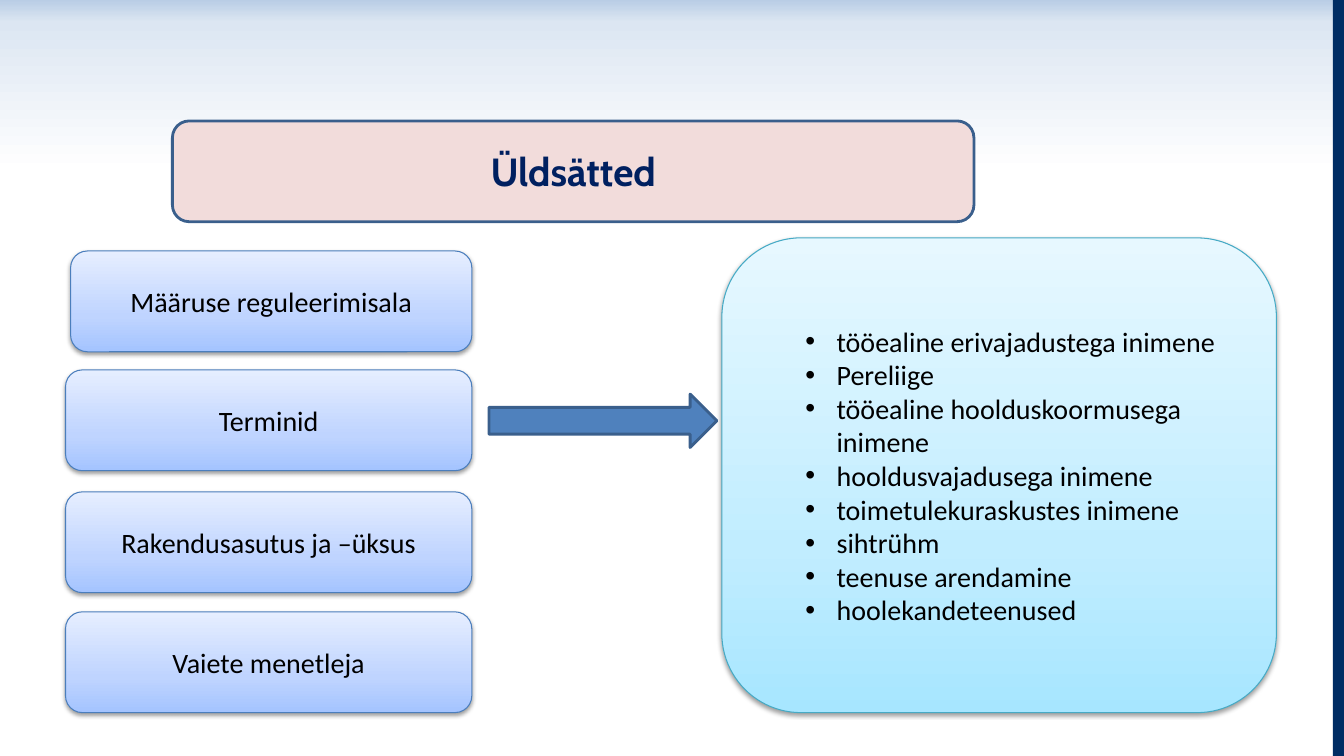
from lxml import etree
from pptx import Presentation
from pptx.dml.color import RGBColor
from pptx.enum.shapes import MSO_SHAPE as SHAPE
from pptx.enum.text import MSO_ANCHOR as ANCHOR, PP_ALIGN as ALIGN
from pptx.oxml.ns import qn
from pptx.util import Inches, Pt


def rgb(value):
    return RGBColor.from_string(value)


class SlideBuilder:
    body = {"name": "Calibri", "size": Pt(20), "bold": False}
    heading = {"name": "Cabin", "size": Pt(28), "bold": True}

    def __init__(self, slide):
        self.s = slide

    def shape(self, kind, at, fill, line=None):
        sp = self.s.shapes.add_shape(kind, *map(Inches, at))
        sp.shadow.inherit = False
        sp.fill.solid()
        sp.fill.fore_color.rgb = rgb(fill)
        if line:
            color, width = line
            sp.line.color.rgb = rgb(color)
            sp.line.width = Pt(width)
        else:
            sp.line.fill.background()
        return sp

    def gradient(self, sp, stops, angle):
        grad = etree.Element(qn("a:gradFill"), rotWithShape="1")
        stop_list = etree.SubElement(grad, qn("a:gsLst"))
        for pos, color in stops:
            gs = etree.SubElement(stop_list, qn("a:gs"), pos=str(pos * 1000))
            etree.SubElement(gs, qn("a:srgbClr"), val=color)
        etree.SubElement(grad, qn("a:lin"), ang=str(angle * 60000), scaled="0")
        sp_pr = sp._element.spPr
        sp_pr.replace(sp_pr.find(qn("a:solidFill")), grad)

    def drop_shadow(self, sp):
        effects = sp._element.spPr.find(qn("a:effectLst"))
        shadow = etree.SubElement(effects, qn("a:outerShdw"), blurRad=str(Pt(3.1)),
                                  dist=str(Pt(1.6)), dir="5400000", rotWithShape="0")
        color = etree.SubElement(shadow, qn("a:srgbClr"), val="000000")
        etree.SubElement(color, qn("a:alpha"), val="38000")

    def card(self, at, stops, line):
        sp = self.shape(SHAPE.ROUNDED_RECTANGLE, at, stops[0][1], line)
        self.gradient(sp, stops, 270)
        self.drop_shadow(sp)
        return sp

    def text(self, sp, lines, style, color="000000", bullets=False):
        tf = sp.text_frame
        tf.word_wrap = True
        tf.vertical_anchor = ANCHOR.MIDDLE
        for i, line in enumerate(lines):
            p = tf.add_paragraph() if i else tf.paragraphs[0]
            p.alignment = ALIGN.LEFT if bullets else ALIGN.CENTER
            if bullets:
                self.bullet(p)
            r = p.add_run()
            r.text = line
            for name, value in style.items():
                setattr(r.font, name, value)
            r.font.color.rgb = rgb(color)

    def bullet(self, p):
        p.level = 1
        p_pr = p._p.get_or_add_pPr()
        p_pr.set("marL", str(Inches(0.81)))
        p_pr.set("indent", str(Inches(-0.31)))
        etree.SubElement(p_pr, qn("a:buFont"), typeface="Arial")
        etree.SubElement(p_pr, qn("a:buChar"), char="•")


BLUE = [(0, "A4C4FF"), (35, "BFD4FF"), (100, "E6EEFF")]
CYAN = [(0, "A7E6FF"), (35, "C1EDFF"), (100, "E7F8FF")]
OUTLINE = ("3A5F8C", 2)

TOPICS = [
    ("Määruse reguleerimisala", 0.7, 2.49),
    ("Terminid", 0.65, 3.67),
    ("Rakendusasutus ja –üksus", 0.65, 4.88),
    ("Vaiete menetleja", 0.65, 6.07),
]
TOPIC_RIGHT = 4.68
TERMS = [
    "tööealine erivajadustega inimene",
    "Pereliige",
    "tööealine hoolduskoormusega inimene",
    "hooldusvajadusega inimene",
    "toimetulekuraskustes inimene",
    "sihtrühm",
    "teenuse arendamine",
    "hoolekandeteenused",
]


def main():
    prs = Presentation()
    prs.slide_width, prs.slide_height = Inches(13.33), Inches(7.5)
    b = SlideBuilder(prs.slides.add_slide(prs.slide_layouts[6]))

    # Top fade and right-hand bar
    fade = b.shape(SHAPE.RECTANGLE, (0, 0, 13.33, 1.7), "FFFFFF")
    b.gradient(fade, [(0, "B9CDE5"), (13, "DCE6F2"), (100, "FFFFFF")], 90)
    b.shape(SHAPE.RECTANGLE, (13.22, 0, 0.11, 7.5), "002D64")

    # Title
    title = b.shape(SHAPE.ROUNDED_RECTANGLE, (1.71, 1.2, 7.95, 1), "F2DCDB", OUTLINE)
    b.text(title, ["Üldsätted"], b.heading, "002060")

    # Topics
    for topic, left, top in TOPICS:
        card = b.card((left, top, TOPIC_RIGHT - left, 1), BLUE, ("4B7EBC", 0.75))
        b.text(card, [topic], b.body)

    # Terms and the arrow to them
    panel = b.card((7.16, 2.36, 5.5, 4.71), CYAN, ("46AAC5", 0.75))
    b.text(panel, TERMS, b.body, bullets=True)
    b.shape(SHAPE.RIGHT_ARROW, (4.85, 3.91, 2.26, 0.53), "4F81BD", OUTLINE)

    prs.save("out.pptx")


if __name__ == "__main__":
    main()
